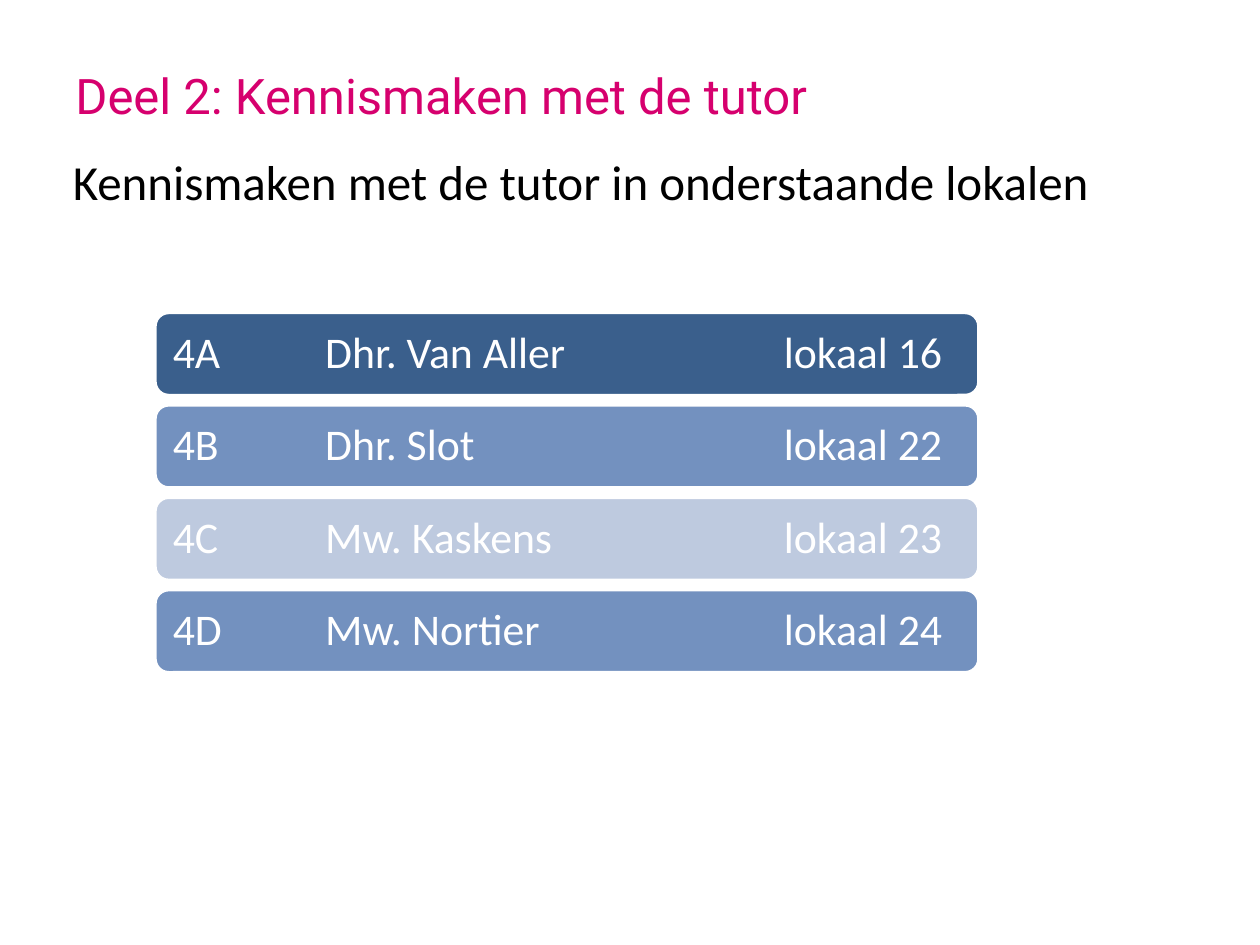
from lxml import etree
from pptx import Presentation
from pptx.dml.color import RGBColor
from pptx.enum.shapes import MSO_SHAPE
from pptx.enum.text import MSO_ANCHOR, PP_ALIGN
from pptx.oxml.ns import qn
from pptx.util import Inches, Pt

ROUNDED_RECTANGLE = MSO_SHAPE.ROUNDED_RECTANGLE
TOP, MIDDLE = MSO_ANCHOR.TOP, MSO_ANCHOR.MIDDLE
LEFT = PP_ALIGN.LEFT

WHITE = "FFFFFF"
ROW_HEIGHT = 0.66
TAB_STOPS = (1.21, 4.85)
TUTORS = (
    ("4A", "Dhr. Van Aller", "lokaal 16", "3A5F8C"),
    ("4B", "Dhr. Slot", "lokaal 22", "7391BF"),
    ("4C", "Mw. Kaskens", "lokaal 23", "BECADF"),
    ("4D", "Mw. Nortier", "lokaal 24", "7391BF"),
)


def color(hex_value):
    """Return the colour for a hex string."""
    return RGBColor.from_string(hex_value)


def add_run(paragraph, text, size, font_name, hex_value):
    """Add one formatted run to a paragraph."""
    run = paragraph.add_run()
    run.text = text
    run.font.size = Pt(size)
    run.font.name = font_name
    run.font.color.rgb = color(hex_value)


def add_tab_stops(paragraph, positions):
    """Give a paragraph left tab stops at positions in inches."""
    tab_list = etree.SubElement(paragraph._p.get_or_add_pPr(), qn("a:tabLst"))
    for position in positions:
        etree.SubElement(tab_list, qn("a:tab"), pos=str(Inches(position)), algn="l")


def add_text(slide, box, text, font_name, hex_value, anchor):
    """Add a one-line heading in the given box."""
    shape = slide.shapes.add_textbox(*map(Inches, box))
    frame = shape.text_frame
    frame.word_wrap = True
    frame.vertical_anchor = anchor
    add_run(frame.paragraphs[0], text, 28, font_name, hex_value)


def add_tutor_row(slide, box, cells, fill):
    """Add one rounded bar with tabbed class, tutor and room."""
    shape = slide.shapes.add_shape(ROUNDED_RECTANGLE, *map(Inches, box))
    shape.shadow.inherit = False
    shape.fill.solid()
    shape.fill.fore_color.rgb = color(fill)
    shape.line.color.rgb = color(WHITE)
    shape.line.width = Pt(2)
    frame = shape.text_frame
    frame.word_wrap = True
    frame.vertical_anchor = MIDDLE
    frame.margin_left = Inches(0.11)
    frame.margin_right = Inches(0.1)
    paragraph = frame.paragraphs[0]
    add_tab_stops(paragraph, TAB_STOPS)
    paragraph.alignment = LEFT
    paragraph.line_spacing = 0.9
    add_run(paragraph, "\t".join(cells), 25, "Calibri", WHITE)


def add_tutor_list(slide, box):
    """Spread the tutor rows evenly over the given box."""
    left, top, width, height = box
    pitch = (height - ROW_HEIGHT) / (len(TUTORS) - 1)
    for index, (*cells, fill) in enumerate(TUTORS):
        row_box = (left, top + index * pitch, width, ROW_HEIGHT)
        add_tutor_row(slide, row_box, cells, fill)


def main():
    """Build and save the tutor slide."""
    presentation = Presentation()
    presentation.slide_width = Inches(10)
    presentation.slide_height = Inches(7.5)
    slide = presentation.slides.add_slide(presentation.slide_layouts[6])
    add_text(slide, (0.5, 0.13, 8.75, 1.25), "Deel 2: Kennismaken met de tutor",
             "Roboto", "D6006E", MIDDLE)
    add_text(slide, (0.48, 1.15, 8.66, 2.44),
             "Kennismaken met de tutor in onderstaande lokalen",
             "Calibri", "000000", TOP)
    add_tutor_list(slide, (1.23, 2.48, 6.54, 2.86))
    presentation.save("out.pptx")


if __name__ == "__main__":
    main()
